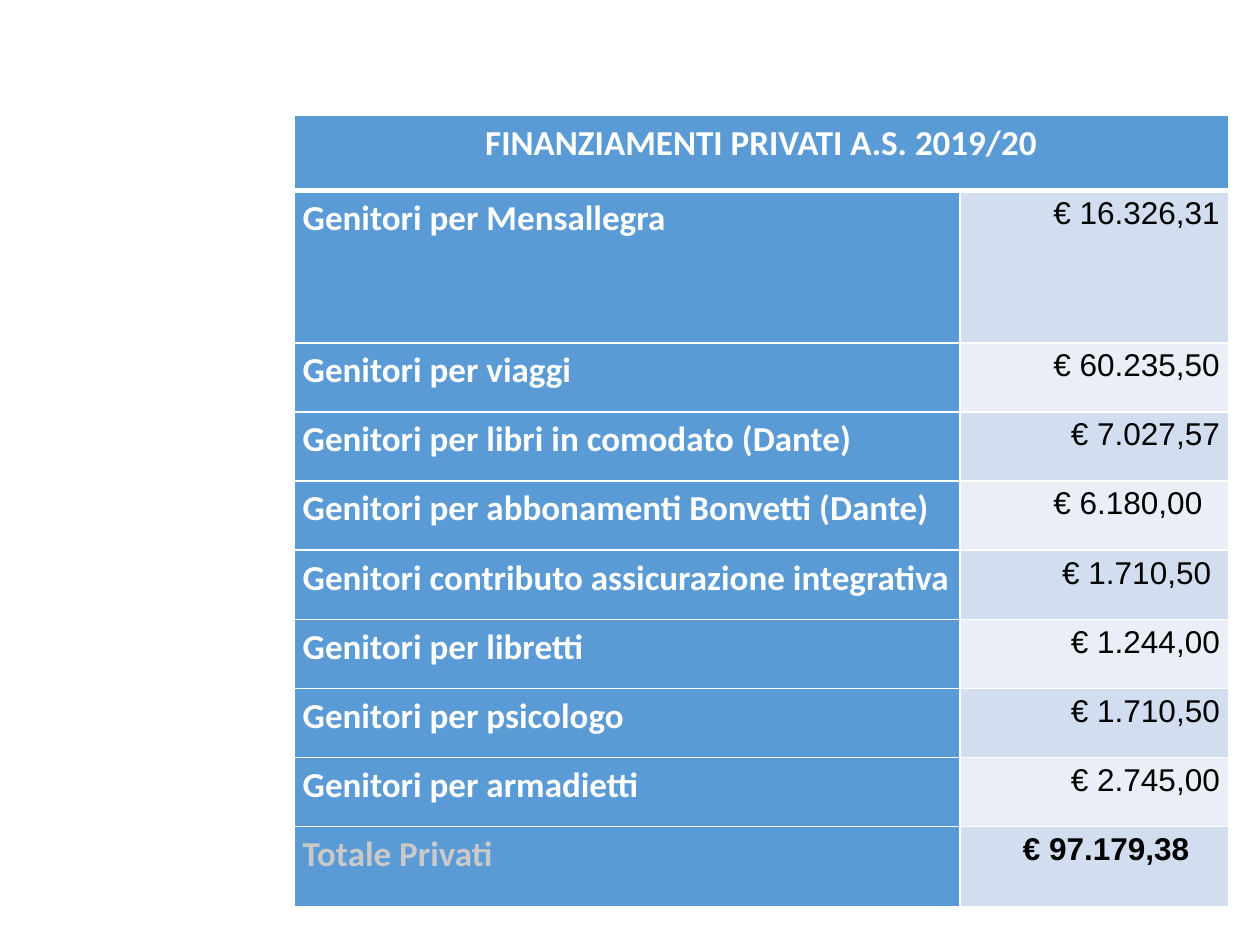
from dataclasses import dataclass

from lxml.etree import SubElement
from pptx import Presentation
from pptx.dml.color import RGBColor as RGB
from pptx.enum.text import PP_ALIGN as Align
from pptx.oxml.ns import qn
from pptx.table import Table, _Cell as Cell
from pptx.util import Pt


@dataclass(frozen=True)
class Theme:
    blue: str = "5B9BD5"
    bands: tuple[str, str] = ("D2DEEF", "EAEFF7")
    white: str = "FFFFFF"
    black: str = "000000"
    grey: str = "C9C9C9"
    label_font: str = "Calibri"
    amount_font: str = "Arial"
    label_size: float = 20
    amount_size: float = 18
    margin: float = 5
    rule: float = 1
    header_rule: float = 3


@dataclass(frozen=True)
class Style:
    font: str
    size: float
    color: str
    fill: str
    align: Align
    bold: bool = True
    inset: float = 0


@dataclass(frozen=True)
class Funding:
    label: str
    amount: str
    height: float = 39.5
    inset: float = 0
    total: bool = False


THEME = Theme()
HEADER = "FINANZIAMENTI PRIVATI A.S. 2019/20"
HEADER_HEIGHT = 43
COLUMNS = (380.5, 153.5)
LEFT, TOP = 168, 66
FUNDINGS = (
    Funding("Genitori per Mensallegra", "€ 16.326,31", height=87),
    Funding("Genitori per viaggi", "€ 60.235,50"),
    Funding("Genitori per libri in comodato (Dante)", "€ 7.027,57"),
    Funding("Genitori per abbonamenti Bonvetti (Dante)", "€ 6.180,00", inset=10),
    Funding("Genitori contributo assicurazione integrativa", "€ 1.710,50", inset=5),
    Funding("Genitori per libretti", "€ 1.244,00"),
    Funding("Genitori per psicologo", "€ 1.710,50"),
    Funding("Genitori per armadietti", "€ 2.745,00"),
    Funding("Totale Privati", "€ 97.179,38", height=46, inset=17.5, total=True),
)


def label_style(color: str, align: Align) -> Style:
    return Style(THEME.label_font, THEME.label_size, color, THEME.blue, align)


def set_borders(cell: Cell, top: float, bottom: float) -> None:
    tc_pr = cell._tc.get_or_add_tcPr()
    widths = {"L": THEME.rule, "R": THEME.rule, "T": top, "B": bottom}
    for i, (side, width) in enumerate(widths.items()):
        ln = SubElement(tc_pr, qn(f"a:ln{side}"), w=str(Pt(width)))
        fill = SubElement(ln, qn("a:solidFill"))
        SubElement(fill, qn("a:srgbClr"), val=THEME.white)
        tc_pr.insert(i, ln)


def write_cell(cell: Cell, text: str, style: Style) -> None:
    cell.fill.solid()
    cell.fill.fore_color.rgb = RGB.from_string(style.fill)
    cell.margin_left = Pt(THEME.margin)
    cell.margin_right = Pt(THEME.margin + style.inset)
    cell.margin_top = cell.margin_bottom = Pt(0)
    p = cell.text_frame.paragraphs[0]
    p.text = text
    p.alignment = style.align
    p.line_spacing = 1.15
    p.space_after = Pt(10)
    p.font.name = style.font
    p.font.size = Pt(style.size)
    p.font.bold = style.bold
    p.font.color.rgb = RGB.from_string(style.color)


def write_funding(table: Table, row: int, funding: Funding) -> None:
    label, amount = table.cell(row, 0), table.cell(row, 1)
    color = THEME.grey if funding.total else THEME.white
    write_cell(label, funding.label, label_style(color, Align.JUSTIFY))
    band = THEME.bands[(row - 1) % 2]
    write_cell(amount, funding.amount, Style(
        THEME.amount_font, THEME.amount_size, THEME.black, band,
        Align.RIGHT, funding.total, funding.inset))


def main() -> None:
    prs = Presentation()
    prs.slide_width, prs.slide_height = Pt(720), Pt(540)
    s = prs.slides.add_slide(prs.slide_layouts[6])
    heights = [HEADER_HEIGHT, *(f.height for f in FUNDINGS)]
    table = s.shapes.add_table(
        len(heights), len(COLUMNS), Pt(LEFT), Pt(TOP),
        Pt(sum(COLUMNS)), Pt(sum(heights))).table
    table.horz_banding = False
    for column, width in zip(table.columns, COLUMNS):
        column.width = Pt(width)
    for i, (row, height) in enumerate(zip(table.rows, heights)):
        row.height = Pt(height)
        top = THEME.header_rule if i == 1 else THEME.rule
        bottom = THEME.header_rule if i == 0 else THEME.rule
        for cell in row.cells:
            set_borders(cell, top, bottom)
    table.cell(0, 0).merge(table.cell(0, 1))
    write_cell(table.cell(0, 0), HEADER, label_style(THEME.white, Align.CENTER))
    for i, funding in enumerate(FUNDINGS, 1):
        write_funding(table, i, funding)
    prs.save("out.pptx")


if __name__ == "__main__":
    main()
